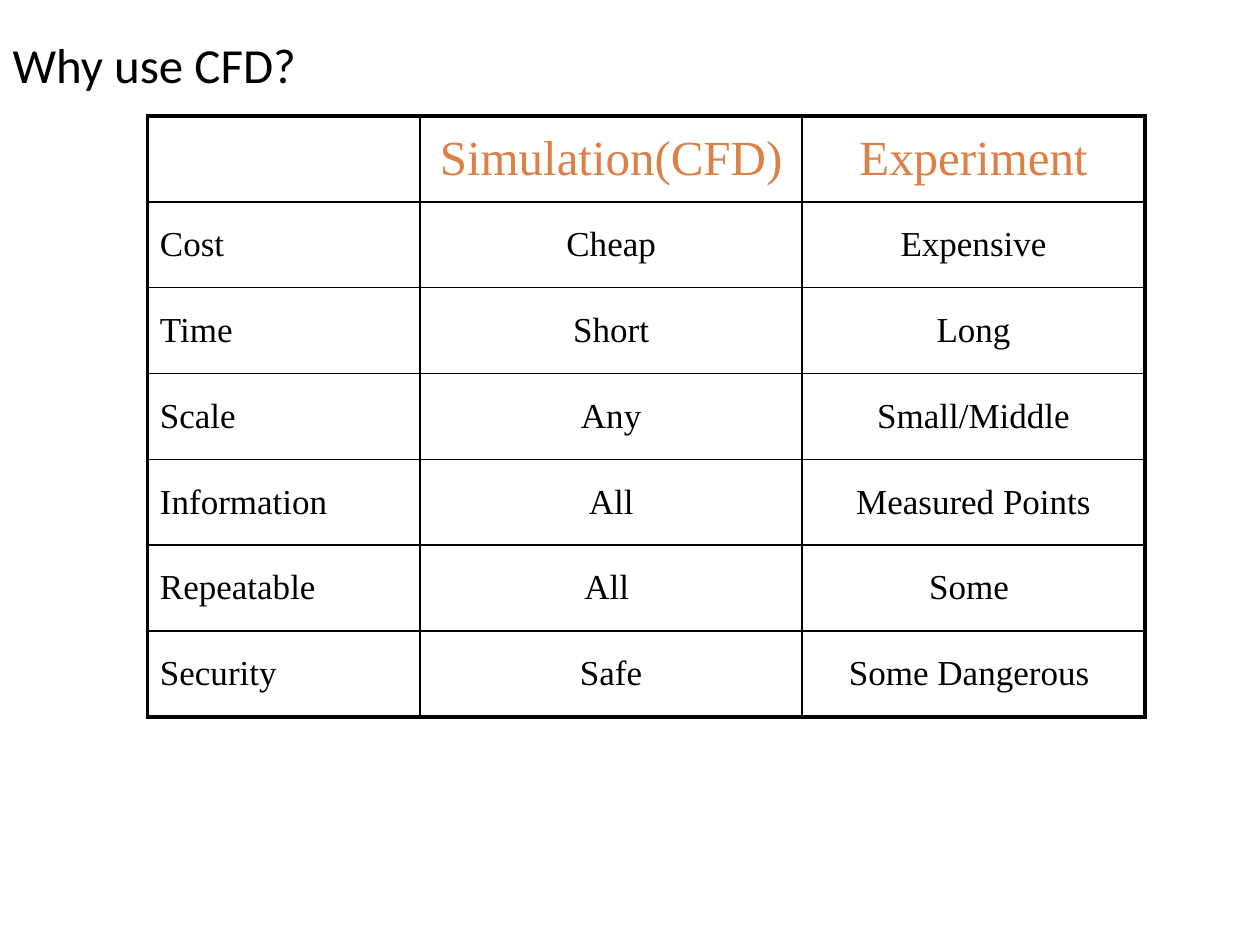
from lxml import etree
from pptx import Presentation
from pptx.dml.color import RGBColor
from pptx.enum.text import MSO_ANCHOR, PP_ALIGN
from pptx.oxml.ns import qn
from pptx.util import Cm, Pt

LEFT, CENTER = PP_ALIGN.LEFT, PP_ALIGN.CENTER
MIDDLE = MSO_ANCHOR.MIDDLE

# Content
TITLE = "Why use CFD?"
ROWS = [
    ("", "Simulation(CFD)", "Experiment"),
    ("Cost", "Cheap", "Expensive"),
    ("Time", "Short", "Long"),
    ("Scale", "Any", "Small/Middle"),
    ("Information", "All", "Measured Points"),
    ("Repeatable", "All ", "Some "),
    ("Security", "Safe", "Some Dangerous "),
]
COLORS = {"text": "000000", "header": "DD8047", "border": "000000"}
COL_WIDTHS = [Cm(5.5), Cm(7.7), Cm(6.91)]
ROW_HEIGHT = Cm(1.73)
THIN, THICK = Pt(1), Pt(2.25)


def add_text(tf, text, font, size, color, align):
    p = tf.paragraphs[0]
    p.alignment = align
    r = p.add_run()
    r.text = text
    r.font.name = font
    r.font.size = Pt(size)
    r.font.color.rgb = RGBColor.from_string(COLORS[color])


def set_borders(cell, outer_sides):
    tcPr = cell._tc.get_or_add_tcPr()
    for i, side in enumerate("LRTB"):
        width = THICK if side in outer_sides else THIN
        ln = etree.Element(qn(f"a:ln{side}"), w=str(width))
        fill = etree.SubElement(ln, qn("a:solidFill"))
        etree.SubElement(fill, qn("a:srgbClr"), val=COLORS["border"])
        tcPr.insert(i, ln)


prs = Presentation()
prs.slide_width, prs.slide_height = Cm(25.4), Cm(19.05)
s = prs.slides.add_slide(prs.slide_layouts[5])

# Title
title = s.shapes.title
title.left, title.top, title.width, title.height = Cm(0), Cm(0.43), Cm(11.86), Cm(1.7)
title.text_frame.vertical_anchor = MIDDLE
add_text(title.text_frame, TITLE, "Calibri", 28, "text", LEFT)

# Comparison table
last_row, last_col = len(ROWS) - 1, len(COL_WIDTHS) - 1
table = s.shapes.add_table(len(ROWS), len(COL_WIDTHS), Cm(2.97), Cm(2.34),
                           sum(COL_WIDTHS), ROW_HEIGHT * len(ROWS)).table
table.first_row = table.horz_banding = False
for column, width in zip(table.columns, COL_WIDTHS):
    column.width = width

for i, row in enumerate(ROWS):
    table.rows[i].height = ROW_HEIGHT
    for j, text in enumerate(row):
        cell = table.cell(i, j)
        cell.fill.background()
        cell.vertical_anchor = MIDDLE
        edges = {"T": i == 0, "B": i == last_row, "L": j == 0, "R": j == last_col}
        set_borders(cell, [side for side, outer in edges.items() if outer])
        if text:
            size, color = (28, "header") if i == 0 else (20, "text")
            add_text(cell.text_frame, text, "Times New Roman", size, color,
                     CENTER if j else LEFT)

prs.save("out.pptx")
